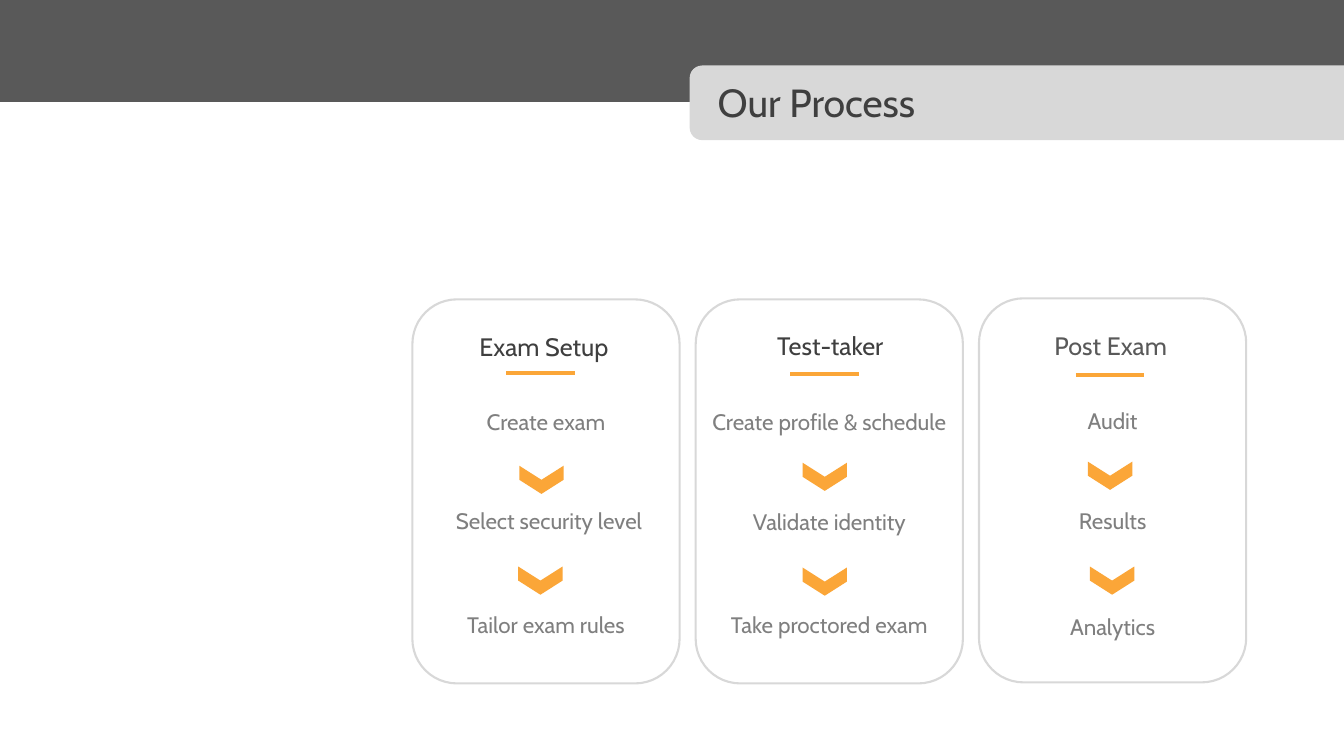
from dataclasses import dataclass

from lxml import etree
from pptx import Presentation
from pptx.dml.color import RGBColor
from pptx.enum.shapes import MSO_CONNECTOR, MSO_SHAPE
from pptx.enum.text import MSO_AUTO_SIZE, PP_ALIGN
from pptx.oxml.ns import qn
from pptx.util import Pt

RECTANGLE = MSO_SHAPE.RECTANGLE
ROUNDED = MSO_SHAPE.ROUNDED_RECTANGLE
CHEVRON = MSO_SHAPE.CHEVRON
STRAIGHT = MSO_CONNECTOR.STRAIGHT
FIT_TEXT = MSO_AUTO_SIZE.SHAPE_TO_FIT_TEXT
LEFT = PP_ALIGN.LEFT
CENTER = PP_ALIGN.CENTER
PX = 9144
SLIDE_WIDTH, SLIDE_HEIGHT = 1333, 750


@dataclass(frozen=True)
class Theme:
    font: str = "Cabin"
    dark: str = "3F3F3F"
    band: str = "595959"
    step: str = "7F7F7F"
    pale: str = "D8D8D8"
    white: str = "FFFFFF"
    accent: str = "FBA638"
    title_size: int = 28
    heading_size: int = 18
    step_size: int = 16
    border_width: float = 1.5
    rule_width: float = 2.25


THEME = Theme()


@dataclass(frozen=True)
class Card:
    top: int
    heading: str
    heading_color: str
    heading_place: tuple
    rule_place: tuple
    steps: tuple
    arrows: tuple


CARDS = (
    Card(297, "Exam Setup", THEME.dark, (-2, 27), (93, 73),
         (("Create exam", 0, 103), ("Select security level", 3, 201), ("Tailor exam rules", 0, 304)),
         ((-4, 157), (-5, 257))),
    Card(297, "Test-taker", THEME.dark, (1, 26), (94, 74),
         (("Create profile & schedule", 0, 103), ("Validate identity", 0, 202), ("Take proctored exam", 0, 304)),
         ((-4, 154), (-4, 258))),
    Card(296, "Post Exam", THEME.band, (-2, 27), (96, 76),
         (("Audit", 0, 103), ("Results", 0, 202), ("Analytics", 0, 307)),
         ((-2, 154), (0, 258))),
)


def scaled(*lengths):
    return [length * PX for length in lengths]


def add_block(shapes, kind, box, fill, line=None):
    shape = shapes.add_shape(kind, *scaled(*box))
    shape.shadow.inherit = False
    shape.fill.solid()
    shape.fill.fore_color.rgb = RGBColor.from_string(fill)
    if line:
        shape.line.color.rgb = RGBColor.from_string(line)
        shape.line.width = Pt(THEME.border_width)
    else:
        shape.line.fill.background()
    return shape


def add_text(shapes, text, box, *, size, color, align=CENTER):
    text_box = shapes.add_textbox(*scaled(*box))
    frame = text_box.text_frame
    frame.word_wrap = True
    frame.auto_size = FIT_TEXT
    paragraph = frame.paragraphs[0]
    paragraph.text = text
    paragraph.alignment = align
    paragraph.font.name = THEME.font
    paragraph.font.size = Pt(size)
    paragraph.font.color.rgb = RGBColor.from_string(color)


def add_rule(shapes, left, top, width):
    rule = shapes.add_connector(STRAIGHT, *scaled(left, top, left + width, top))
    rule.line.color.rgb = RGBColor.from_string(THEME.accent)
    rule.line.width = Pt(THEME.rule_width)
    etree.SubElement(rule._element.spPr, qn("a:effectLst"))


def add_header(shapes, left, top, width, height):
    add_block(shapes, RECTANGLE, (left, top, width, height), THEME.band)
    add_block(shapes, ROUNDED, (left + 684, top + 65, 672, 74), THEME.pale)


def add_title(shapes, left, top, width, height):
    add_text(shapes, "Our Process", (left, top, width, height),
             size=THEME.title_size, color=THEME.dark, align=LEFT)


def add_card(shapes, card, left, top, width, height):
    parts = shapes.add_group_shape().shapes
    add_block(parts, ROUNDED, (left, top, width, height), THEME.white, THEME.pale)
    shift, drop = card.heading_place
    add_text(parts, card.heading, (left + shift, top + drop, width, 42),
             size=THEME.heading_size, color=card.heading_color)
    shift, drop = card.rule_place
    add_rule(parts, left + shift, top + drop, 68)
    for text, shift, drop in card.steps:
        add_text(parts, text, (left + shift, top + drop, width, 38),
                 size=THEME.step_size, color=THEME.step)
    arrow_width, arrow_height = 28, 44
    for shift, drop in card.arrows:
        arrow_left = left + (width - arrow_width) // 2 + shift
        arrow = add_block(parts, CHEVRON, (arrow_left, top + drop, arrow_width, arrow_height), THEME.accent)
        arrow.rotation = 90


def add_process(shapes, left, width, height, pitch):
    for index, card in enumerate(CARDS):
        add_card(shapes, card, left + index * pitch, card.top, width, height)


def main():
    presentation = Presentation()
    presentation.slide_width, presentation.slide_height = scaled(SLIDE_WIDTH, SLIDE_HEIGHT)
    slide = presentation.slides.add_slide(presentation.slide_layouts[6])
    add_header(slide.shapes, 0, 0, SLIDE_WIDTH, 101)
    add_process(slide.shapes, 409, 265, 381, 281)
    add_title(slide.shapes, 702, 73, 615, 57)
    presentation.save("out.pptx")


if __name__ == "__main__":
    main()
